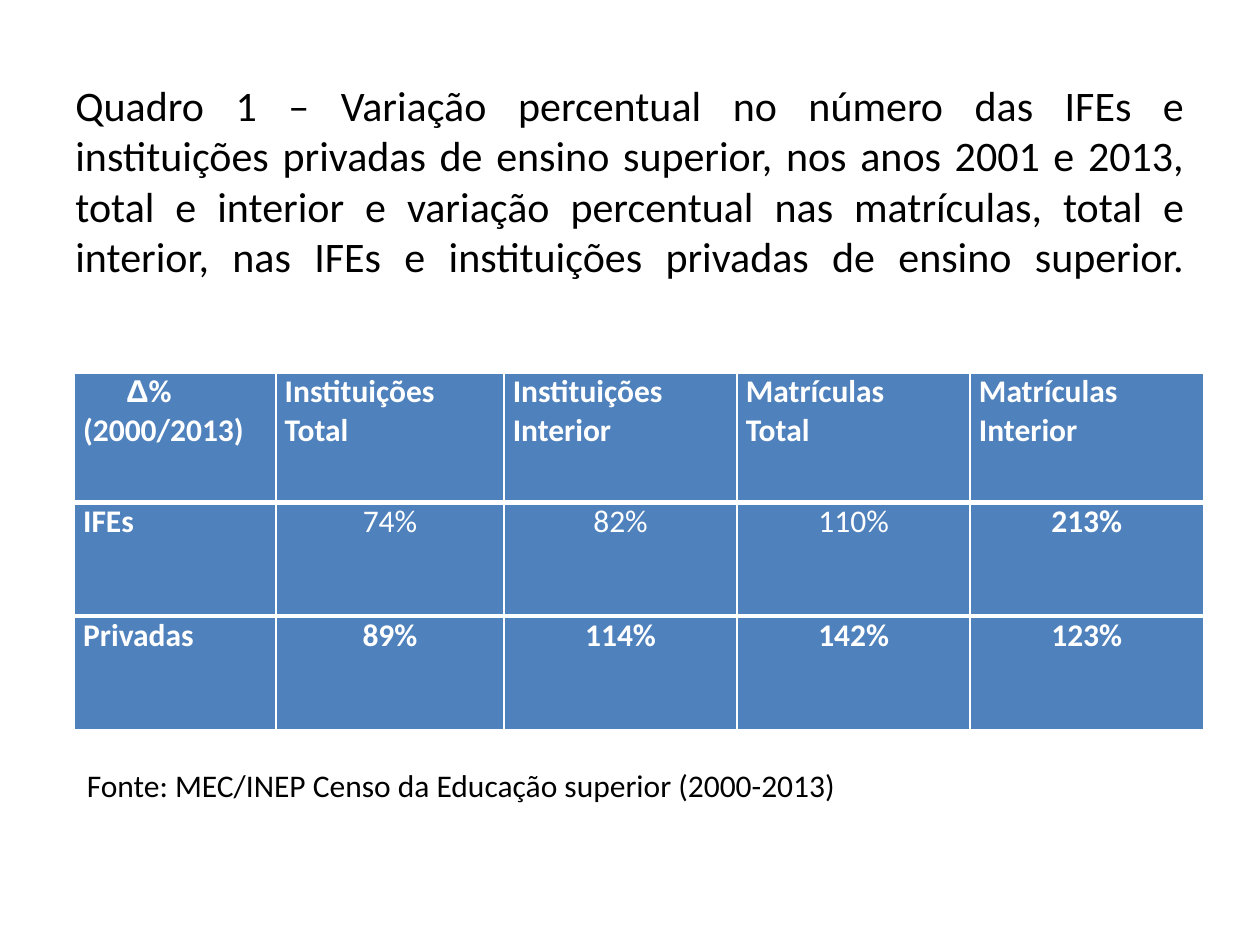
from dataclasses import dataclass

from lxml.etree import SubElement
from pptx import Presentation
from pptx.dml.color import RGBColor
from pptx.enum.text import MSO_ANCHOR, PP_ALIGN
from pptx.oxml.ns import qn
from pptx.util import Inches, Pt


@dataclass(frozen=True)
class Theme:
    ink: str = "000000"
    paper: str = "FFFFFF"
    cell: str = "4F81BD"
    font: str = "Calibri"
    symbol_font: str = "Arial"
    title_size: int = 24
    body_size: int = 18
    thin: int = 1
    thick: int = 3


class SlideBuilder:
    def __init__(self, slide, theme):
        self.slide = slide
        self.theme = theme

    def run(self, paragraph, text, size, color, bold=False, font=None):
        run = paragraph.add_run()
        run.text = text
        run.font.name = font or self.theme.font
        run.font.size = Pt(size)
        run.font.bold = bold
        run.font.color.rgb = RGBColor.from_string(color)

    def text(self, box, text, size, align=PP_ALIGN.LEFT, anchor=MSO_ANCHOR.TOP, final_break=False):
        frame = self.slide.shapes.add_textbox(*map(Inches, box)).text_frame
        frame.word_wrap = True
        frame.vertical_anchor = anchor
        paragraph = frame.paragraphs[0]
        paragraph.alignment = align
        self.run(paragraph, text, size, self.theme.ink)
        if final_break:
            paragraph.add_line_break()
            SubElement(paragraph._p, qn("a:endParaRPr"), sz=str(size * 100))

    def border(self, cell, side, width):
        line = SubElement(cell._tc.get_or_add_tcPr(), qn(f"a:{side}"), w=str(Pt(width)))
        fill = SubElement(line, qn("a:solidFill"))
        SubElement(fill, qn("a:srgbClr"), val=self.theme.paper)

    def cell(self, cell, paragraphs, align, bold, top, bottom):
        theme = self.theme
        cell.margin_left = cell.margin_right = Inches(0.07)
        cell.margin_top = cell.margin_bottom = 0
        for side, width in (("lnL", theme.thin), ("lnR", theme.thin), ("lnT", top), ("lnB", bottom)):
            self.border(cell, side, width)
        cell.fill.solid()
        cell.fill.fore_color.rgb = RGBColor.from_string(theme.cell)
        frame = cell.text_frame
        for index, text in enumerate(paragraphs):
            paragraph = frame.add_paragraph() if index else frame.paragraphs[0]
            paragraph.alignment = align
            if text.startswith("Δ"):
                paragraph._p.get_or_add_pPr().set("indent", str(Inches(0.34)))
                self.run(paragraph, "Δ", theme.body_size, theme.paper, bold, theme.symbol_font)
                text = text[1:]
            self.run(paragraph, text, theme.body_size, theme.paper, bold)

    def table(self, box, widths, heights, rows, regular_cells):
        theme = self.theme
        table = self.slide.shapes.add_table(len(rows), len(widths), *map(Inches, box)).table
        for column, width in zip(table.columns, widths):
            column.width = Inches(width)
        last = len(rows) - 1
        for r, (row, height) in enumerate(zip(rows, heights)):
            table.rows[r].height = Inches(height)
            top = theme.thick if r else theme.thin
            bottom = theme.thick if r < last else theme.thin
            for c, value in enumerate(row):
                align = PP_ALIGN.CENTER if r and c else PP_ALIGN.JUSTIFY
                bold = (r, c) not in regular_cells
                self.cell(table.cell(r, c), value.split("\n"), align, bold, top, bottom)


def main():
    presentation = Presentation()
    presentation.slide_width = Inches(10)
    presentation.slide_height = Inches(7.5)
    theme = Theme()
    builder = SlideBuilder(presentation.slides.add_slide(presentation.slide_layouts[6]), theme)

    builder.text(
        (0.5, 0.92, 9, 1.42),
        "Quadro 1 – Variação percentual no número das IFEs e instituições privadas "
        "de ensino superior, nos anos 2001 e 2013, total e interior e variação "
        "percentual nas matrículas, total e interior, nas IFEs e instituições "
        "privadas de ensino superior.",
        theme.title_size, PP_ALIGN.JUSTIFY, MSO_ANCHOR.MIDDLE, final_break=True,
    )
    variation = [
        ["Δ%\n(2000/2013)", "Instituições\nTotal", "Instituições\nInterior",
         "Matrículas\nTotal", "Matrículas Interior"],
        ["IFEs", "74%", "82%", "110%", "213%"],
        ["Privadas", "89%", "114%", "142%", "123%"],
    ]
    builder.table(
        (0.59, 2.96, 8.98, 2.83), [1.6, 1.81, 1.85, 1.85, 1.85], [1.03, 0.9, 0.9],
        variation, regular_cells={(1, 1), (1, 2), (1, 3)},
    )
    builder.text(
        (0.59, 6.03, 8.35, 0.4),
        "Fonte: MEC/INEP Censo da Educação superior (2000-2013)", theme.body_size,
    )
    presentation.save("out.pptx")


if __name__ == "__main__":
    main()
